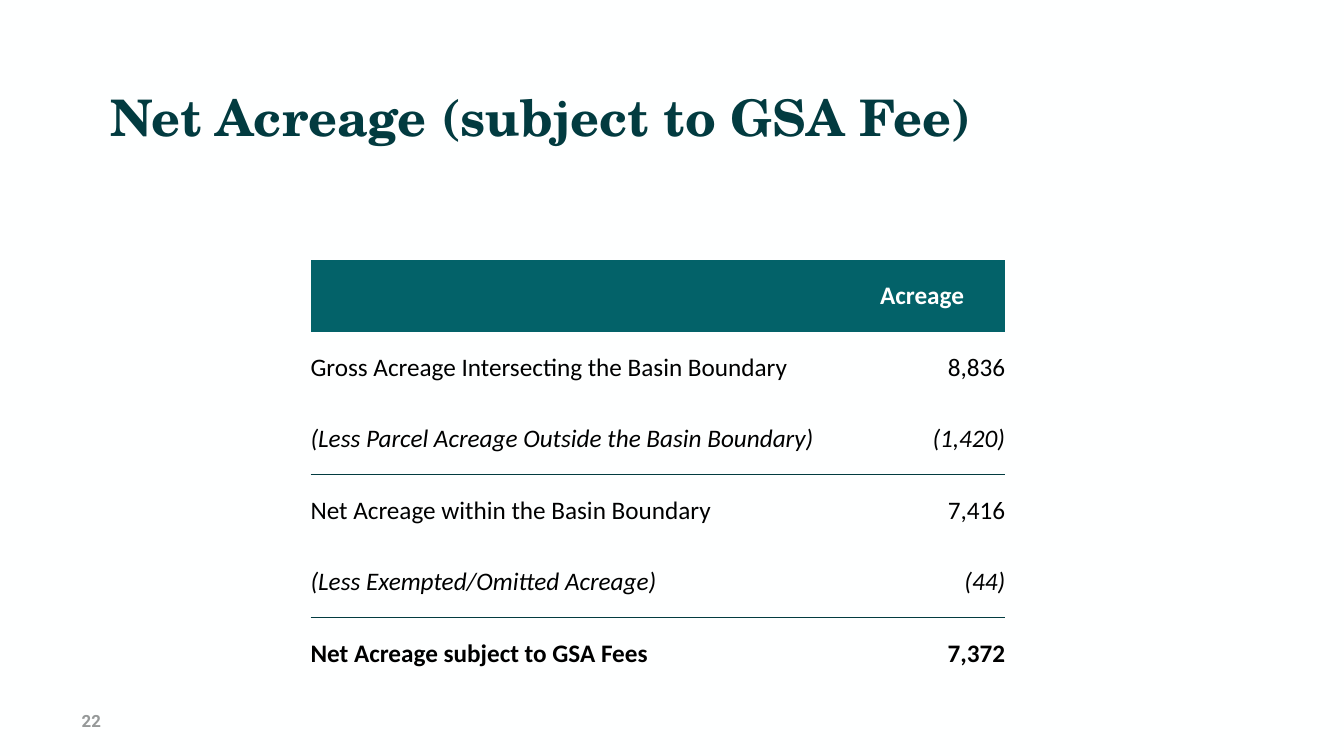
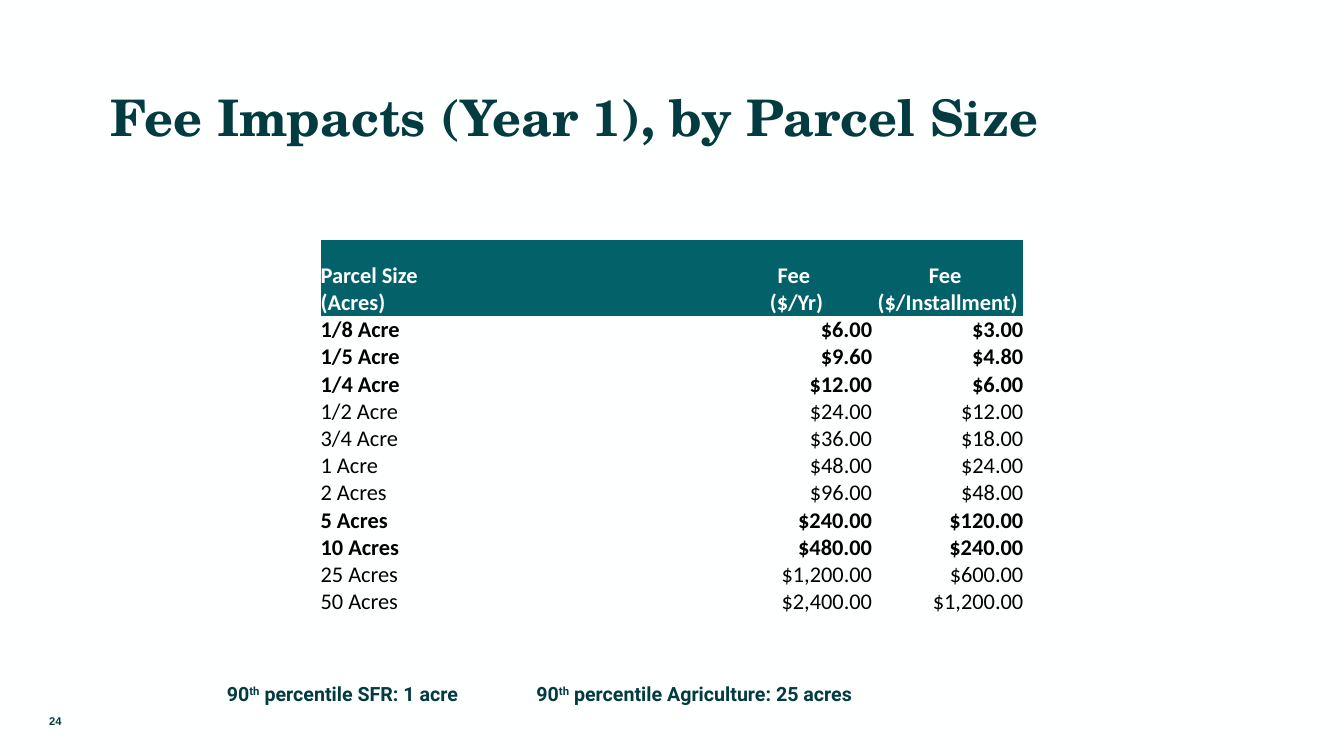
import pptx
import pptx.util
import pptx.dml.color
import pptx.enum.text
import pptx.oxml
import pptx.oxml.ns

Inches, Pt = pptx.util.Inches, pptx.util.Pt
RGB = pptx.dml.color.RGBColor
ALIGN = pptx.enum.text.PP_ALIGN
ANCHOR = pptx.enum.text.MSO_ANCHOR

PAPER = RGB(0xFE, 0xFF, 0xFF)
INK = RGB(0x02, 0x3B, 0x40)
TEAL = RGB(0x03, 0x62, 0x69)
GREY = RGB(0x96, 0x99, 0x99)
WHITE = RGB(0xFF, 0xFF, 0xFF)
BLACK = RGB(0, 0, 0)
PLAIN_STYLE = "{2D5ABB26-0587-4C30-8999-92F81FD0307C}"

# Each row: its cells, then marks (b bold, i italic, u rule underneath).
NET = [
    (("", "Acreage"), "b"),
    (("Gross Acreage Intersecting the Basin Boundary", "8,836"), ""),
    (("(Less Parcel Acreage Outside the Basin Boundary)", "(1,420)"), "iu"),
    (("Net Acreage within the Basin Boundary", "7,416"), ""),
    (("(Less Exempted/Omitted Acreage)", "(44)"), "iu"),
    (("Net Acreage subject to GSA Fees", "7,372"), "b"),
]
FEES = [
    (("Parcel Size \n(Acres)", "Fee \n($/Yr)", "Fee \n($/Installment)"), "b"),
    (("1/8 Acre", "$6.00", "$3.00"), "b"),
    (("1/5 Acre", "$9.60", "$4.80"), "b"),
    (("1/4 Acre", "$12.00", "$6.00"), "b"),
    (("1/2 Acre", "$24.00", "$12.00"), ""),
    (("3/4 Acre", "$36.00", "$18.00"), ""),
    (("1 Acre", "$48.00", "$24.00"), ""),
    (("2 Acres", "$96.00", "$48.00"), ""),
    (("5 Acres", "$240.00", "$120.00"), "b"),
    (("10 Acres", "$480.00", "$240.00"), "b"),
    (("25 Acres", "$1,200.00", "$600.00"), ""),
    (("50 Acres", "$2,400.00", "$1,200.00"), ""),
]
# Text between carets is raised.
NOTE = "90^th^ percentile SFR: 1 acre\t90^th^ percentile Agriculture: 25 acres"
NOTE_TAB = 3.07

SLIDES = [
    dict(title="Net Acreage (subject to GSA Fee)",
         page=dict(text="22", size=12, font="Roboto", color=GREY,
                   align=ALIGN.RIGHT),
         table=dict(rows=NET, at=(3.08, 2.58), cols=(5.24, 1.65),
                    head=0.71, step=0.71, size=18, anchor=ANCHOR.MIDDLE)),
    dict(title="Fee Impacts (Year 1), by Parcel Size",
         page=dict(text="24", size=8, font="Arial", color=INK,
                   align=ALIGN.CENTER),
         table=dict(rows=FEES, at=(3.18, 2.38), cols=(3.97, 1.5, 1.5),
                    head=0.76, step=0.27, size=16, anchor=ANCHOR.BOTTOM),
         note=NOTE),
]


def write(frame, text, size, font, color, bold=True, italic=False,
          align=ALIGN.LEFT):
    """Fill the first paragraph; newlines break lines, carets raise text."""
    para = frame.paragraphs[0]
    para.alignment = align
    para.font.size = Pt(size)
    for row, line in enumerate(text.split("\n")):
        if row:
            para.add_line_break()
        for part, words in enumerate(line.split("^")):
            run = para.add_run()
            run.text = words
            face = run.font
            face.size, face.name = Pt(size), font
            face.bold, face.italic = bold, italic
            face.color.rgb = color
            if part % 2:
                run._r.get_or_add_rPr().set("baseline", "30000")
    return para


def box(slide, at, inset, anchor, **style):
    frame = slide.shapes.add_textbox(*map(Inches, at)).text_frame
    frame.word_wrap = True
    frame.vertical_anchor = anchor
    (frame.margin_left, frame.margin_top,
     frame.margin_right, frame.margin_bottom) = map(Inches, inset)
    return write(frame, **style)


def rule(cell):
    """Draw a thin line under a cell."""
    line = pptx.oxml.parse_xml(
        f'<a:lnB {pptx.oxml.ns.nsdecls("a")} w="{Pt(1)}"><a:solidFill>'
        f'<a:srgbClr val="{INK}"/></a:solidFill></a:lnB>')
    cell._tc.get_or_add_tcPr().insert(0, line)


def grid(slide, rows, at, cols, head, step, size, anchor):
    high = head + step * (len(rows) - 1)
    frame = slide.shapes.add_table(
        len(rows), len(cols), *map(Inches, (*at, sum(cols), high)))
    table = frame.table
    table.horz_banding = False
    table._tbl.tblPr.find(pptx.oxml.ns.qn("a:tableStyleId")).text = PLAIN_STYLE
    for col, wide in zip(table.columns, cols):
        col.width = Inches(wide)
    for r, (texts, marks) in enumerate(rows):
        table.rows[r].height = Inches(step if r else head)
        for c, text in enumerate(texts):
            cell = table.cell(r, c)
            cell.margin_left = cell.margin_right = 0
            cell.margin_top = cell.margin_bottom = 0
            cell.vertical_anchor = anchor
            if r:
                cell.fill.background()
            else:
                cell.fill.solid()
                cell.fill.fore_color.rgb = TEAL
            side = ALIGN.RIGHT if r else ALIGN.CENTER
            write(cell.text_frame, text, size, "Calibri",
                  BLACK if r else WHITE, bold="b" in marks,
                  italic="i" in marks, align=side if c else ALIGN.LEFT)
            if "u" in marks:
                rule(cell)


def footnote(slide, text):
    para = box(slide, (1.65, 6.45, 8.62, 0.6), (0.6, 0.05, 0.1, 0.05),
               ANCHOR.BOTTOM, text=text, size=14, font="Roboto", color=INK)
    para.line_spacing = 0.9
    para.space_before = Pt(5)
    para._p.get_or_add_pPr().append(pptx.oxml.parse_xml(
        f'<a:tabLst {pptx.oxml.ns.nsdecls("a")}>'
        f'<a:tab pos="{Inches(NOTE_TAB)}" algn="l"/></a:tabLst>'))


def build(deck, title, page, table, note=None):
    slide = deck.slides.add_slide(deck.slide_layouts[6])
    slide.background.fill.solid()
    slide.background.fill.fore_color.rgb = PAPER
    box(slide, (1.1, 0.64, 11.13, 1.37), (0, 0.21, 0, 0), ANCHOR.TOP,
        text=title, size=36, font="TeX Gyre Schola", color=INK)
    box(slide, (0, 6.95, 1.1, 0.4), (0.1, 0.05, 0.1, 0.05), ANCHOR.MIDDLE,
        **page)
    if note:
        footnote(slide, note)
    grid(slide, **table)


def main():
    deck = pptx.Presentation()
    deck.slide_width, deck.slide_height = Inches(13.33), Inches(7.5)
    for parts in SLIDES:
        build(deck, **parts)
    deck.save("out.pptx")


if __name__ == "__main__":
    main()
